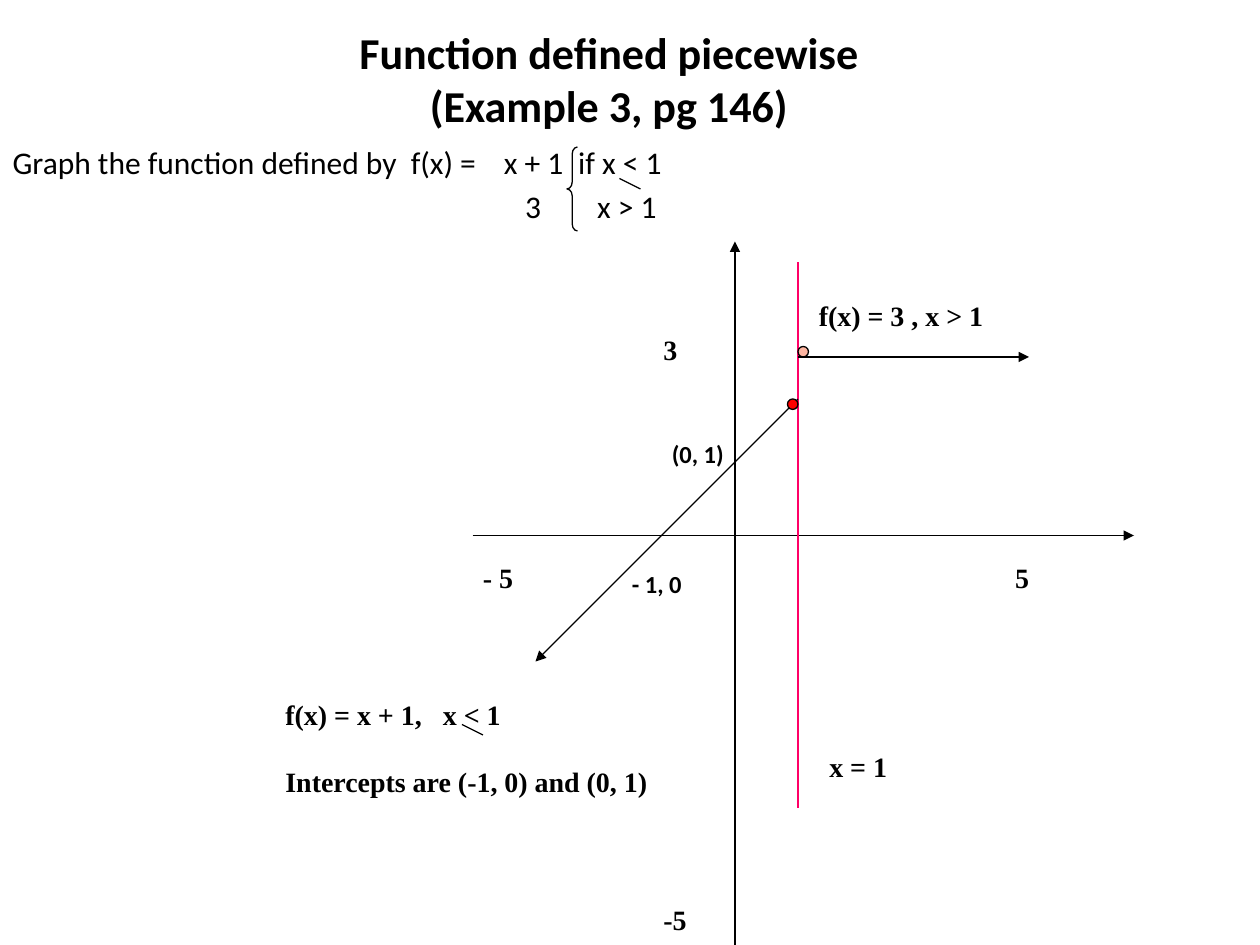
from dataclasses import dataclass
from typing import Any

from lxml.etree import SubElement
from pptx import Presentation
from pptx.dml.color import RGBColor
from pptx.enum.shapes import MSO_CONNECTOR, MSO_SHAPE
from pptx.enum.text import MSO_ANCHOR, MSO_AUTO_SIZE, PP_ALIGN
from pptx.oxml.ns import qn
from pptx.util import Emu, Inches, Pt

BLACK = RGBColor(0x00, 0x00, 0x00)
PINK = RGBColor(0xFF, 0x00, 0x66)
RED = RGBColor(0xFF, 0x00, 0x00)
PEACH = RGBColor(0xFD, 0xB5, 0xA1)

# Grid of 120 columns by 90 rows
CELL = Inches(10) // 120
SERIF = {"name": "Times New Roman", "size": Pt(16), "bold": True}
SMALL = {"name": "Calibri", "size": Pt(14), "bold": True}
HEAD = {"name": "Calibri", "size": Pt(25.2), "bold": True}
LIST = {"name": "Calibri", "size": Pt(18), "bold": False}


@dataclass
class Line:
    x1: float
    y1: float
    x2: float
    y2: float
    color: RGBColor = BLACK
    arrow: bool = False


@dataclass
class Label:
    text: str
    col: float
    row: float
    wide: float
    font: dict
    high: float = 4.4


@dataclass
class Dot:
    col: float
    row: float
    color: RGBColor


def grid(*cells: float) -> list[Emu]:
    return [Emu(round(n * CELL)) for n in cells]


def put(item: Any, values: dict) -> None:
    for key, value in values.items():
        setattr(item, key, value)


def place(shape: Any, *cells: float) -> None:
    put(shape, dict(zip(("left", "top", "width", "height"), grid(*cells))))


def write(frame: Any, text: str, font: dict, tabs: tuple = ()) -> None:
    """Fill the frame; tabs holds the tab stops, in inches, of each paragraph."""
    frame.text = text
    for i, para in enumerate(frame.paragraphs):
        for run in para.runs:
            put(run.font, font)
            run.font.color.rgb = BLACK
        if i < len(tabs):
            props = para._p.get_or_add_pPr()
            stops = SubElement(props, qn("a:tabLst"))
            for stop in tabs[i]:
                SubElement(stops, qn("a:tab"), pos=str(Inches(stop)), algn="l")


def draw_line(shapes: Any, line: Line) -> None:
    ends = grid(line.x1, line.y1, line.x2, line.y2)
    link = shapes.add_connector(MSO_CONNECTOR.STRAIGHT, *ends)
    link.line.width = Pt(0.75)
    link.line.color.rgb = line.color
    if line.arrow:
        SubElement(link.line._get_or_add_ln(), qn("a:tailEnd"), type="triangle")
    SubElement(link._element.spPr, qn("a:effectLst"))


def draw_label(shapes: Any, label: Label, tabs: tuple = ()) -> Any:
    box = shapes.add_textbox(*grid(label.col, label.row, label.wide, label.high))
    box.text_frame.word_wrap = True
    write(box.text_frame, label.text, label.font, tabs)
    return box.text_frame


def draw_shape(shapes: Any, kind: MSO_SHAPE, *cells: float) -> Any:
    shape = shapes.add_shape(kind, *grid(*cells))
    shape.shadow.inherit = False
    shape.line.color.rgb = BLACK
    shape.line.width = Pt(0.75)
    return shape


LINES = [
    Line(59, 17, 61, 18),  # bar under "<" in the definition
    Line(45, 51, 108, 51, arrow=True),  # x axis
    Line(70, 90, 70, 23, arrow=True),  # y axis
    Line(76, 25, 76, 77, PINK),  # x = 1
    Line(76, 38, 51, 63, arrow=True),  # x + 1
    Line(76, 34, 98, 34, arrow=True),  # constant 3
    Line(44, 69, 46, 70),  # bar under "<" in the caption
]
LABELS = [
    Label("- 5", 44.8, 52.8, 6, SERIF),
    Label("5", 95.5, 52.8, 5, SERIF),
    Label("3", 62, 31.1, 5, SERIF),
    Label("-5", 62, 85.4, 6, SERIF),
    Label("f(x) = 3 , x > 1", 76.8, 27.8, 20, SERIF),
    Label("x = 1", 77.8, 70.8, 10, SERIF),
    Label("- 1, 0", 59, 53.6, 9, SMALL),
    Label("(0, 1)", 62.8, 41.2, 9, SMALL),
]
CASES = Label("x + 1\tif x < 1\n\t3\tx > 1", 46.8, 13, 20, LIST, 9)
NOTE = Label("f(x) = x + 1,\tx < 1\nIntercepts are (-1, 0) and (0, 1)",
             26, 65.8, 46, SERIF, 10.8)
DOTS = [Dot(75, 38, RED), Dot(76, 33, PEACH)]


def main() -> None:
    deck = Presentation()
    deck.slide_width, deck.slide_height = grid(120, 90)
    slide = deck.slides.add_slide(deck.slide_layouts[1])
    shapes = slide.shapes

    # Title
    title = shapes.title
    place(title, 7, 2, 102, 11)
    write(title.text_frame, "Function defined piecewise\v(Example 3, pg 146)", HEAD)
    put(title.text_frame, {"vertical_anchor": MSO_ANCHOR.MIDDLE,
                           "auto_size": MSO_AUTO_SIZE.NONE})
    title.text_frame.paragraphs[0].alignment = PP_ALIGN.CENTER

    # Definition: lead-in, then the two cases in columns
    body = slide.placeholders[1]
    place(body, 0, 13, 109, 54)
    body.text_frame.auto_size = MSO_AUTO_SIZE.NONE
    write(body.text_frame, "Graph the function defined by  f(x) =", LIST)
    lead = body.text_frame.paragraphs[0]
    props = lead._p.get_or_add_pPr()
    put(lead, {"space_before": Pt(3.6)})
    props.set("marL", "0")
    props.set("indent", "0")
    SubElement(props, qn("a:buNone"))

    cases = draw_label(shapes, CASES, ((0.59,), (0.17, 0.74)))
    for para in cases.paragraphs:
        para.space_before = Pt(3.6)

    brace = draw_shape(shapes, MSO_SHAPE.LEFT_BRACE, 54, 14, 1, 8)
    brace.fill.background()
    brace.adjustments[0] = 0.667

    # Axes, graph and labels
    for line in LINES:
        draw_line(shapes, line)
    for label in LABELS:
        draw_label(shapes, label)
    for dot in DOTS:
        mark = draw_shape(shapes, MSO_SHAPE.OVAL, dot.col, dot.row, 1, 1)
        mark.fill.solid()
        mark.fill.fore_color.rgb = dot.color

    # Caption
    note = draw_label(shapes, NOTE, ((1.25,),))
    note.paragraphs[1].space_before = Pt(19.5)

    deck.save("out.pptx")


if __name__ == "__main__":
    main()
